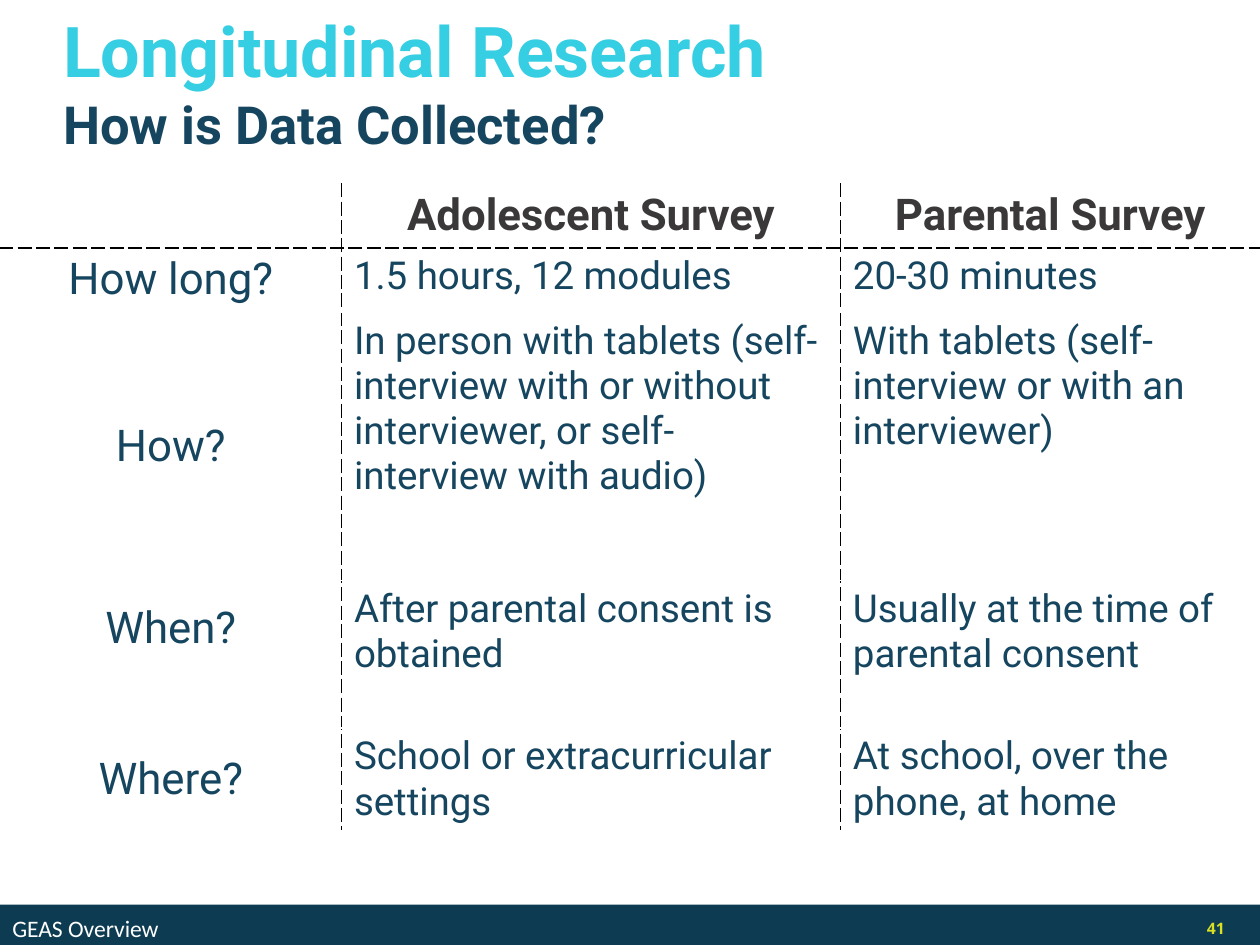
from lxml.etree import SubElement
from pptx import Presentation
from pptx.dml.color import RGBColor
from pptx.enum.shapes import MSO_SHAPE
from pptx.enum.text import MSO_ANCHOR, MSO_AUTO_SIZE, PP_ALIGN
from pptx.oxml.ns import qn
from pptx.util import Inches, Pt

COLORS = {
    "white": "FFFFFF",
    "black": "000000",
    "cyan": "35CEE2",
    "navy": "15455F",
    "charcoal": "3A3838",
    "footer": "0D3B52",
    "lime": "D9E021",
}
COLUMN_WIDTHS = [2.71, 3.96, 3.33]
ROW_HEIGHTS = [0.5, 0.51, 2.13, 1.17, 0.82]
SURVEY_ROWS = [
    ["", "Adolescent Survey", "Parental Survey"],
    ["How long?", "1.5 hours, 12 modules", "20-30 minutes"],
    ["How?",
     "In person with tablets (self-interview with or without interviewer, "
     "or self-interview with audio)",
     "With tablets (self-interview or with an interviewer)"],
    ["When?", "After parental consent is obtained",
     "Usually at the time of parental consent"],
    ["Where?", "School or extracurricular settings",
     "At school, over the phone, at home"],
]
WHEN_ROW = 3


def format_para(para, size, color, font="Roboto", bold=False, align=PP_ALIGN.LEFT):
    para.alignment = align
    for span in para.runs:
        span.font.name = font
        span.font.size = Pt(size)
        span.font.bold = bold
        span.font.color.rgb = RGBColor.from_string(COLORS[color])


def add_title(page, left, top, width, height):
    title = page.shapes.title
    title.left, title.top, title.width, title.height = map(
        Inches, (left, top, width, height))
    frame = title.text_frame
    frame.text = "Longitudinal Research\nHow is Data Collected?"
    frame.word_wrap = True
    frame.auto_size = MSO_AUTO_SIZE.NONE
    frame.vertical_anchor = MSO_ANCHOR.MIDDLE
    heading, question = frame.paragraphs
    format_para(heading, 40, "cyan", bold=True)
    format_para(question, 30, "navy", bold=True)


def set_borders(cell, dashed_edges):
    """Dash the named edges in black and draw the others in white."""
    properties = cell._tc.get_or_add_tcPr()
    for position, edge in enumerate("LRTB"):
        dashed = edge in dashed_edges
        line = SubElement(properties, qn(f"a:ln{edge}"), w=str(Pt(1)))
        fill = SubElement(line, qn("a:solidFill"))
        SubElement(fill, qn("a:srgbClr"),
                   val=COLORS["black" if dashed else "white"])
        SubElement(line, qn("a:prstDash"), val="dash" if dashed else "solid")
        properties.remove(line)
        properties.insert(position, line)  # borders come before the fill


def dashed_edges_at(row, column):
    edges = {0: "B", 1: "T"}.get(row, "")
    if column > 0:
        edges += "L"
    if column < len(COLUMN_WIDTHS) - 1:
        edges += "R"
    return edges


def add_survey_table(page, left, top, width, height):
    table = page.shapes.add_table(
        len(ROW_HEIGHTS), len(COLUMN_WIDTHS),
        *map(Inches, (left, top, width, height))).table
    table.horz_banding = False
    for column, size in zip(table.columns, COLUMN_WIDTHS):
        column.width = Inches(size)
    for row, size in zip(table.rows, ROW_HEIGHTS):
        row.height = Inches(size)

    for row, texts in enumerate(SURVEY_ROWS):
        for column, text in enumerate(texts):
            cell = table.cell(row, column)
            cell.fill.solid()
            cell.fill.fore_color.rgb = RGBColor.from_string(COLORS["white"])
            set_borders(cell, dashed_edges_at(row, column))
            cell.text_frame.text = text
            para = cell.text_frame.paragraphs[0]
            if row == 0:
                format_para(para, 25, "charcoal", bold=True, align=PP_ALIGN.CENTER)
            elif column == 0:
                cell.vertical_anchor = MSO_ANCHOR.MIDDLE
                format_para(para, 25, "navy", align=PP_ALIGN.CENTER)
            else:
                format_para(para, 22, "navy")
    # This label sits level with its two-line answers
    table.cell(WHEN_ROW, 0).margin_bottom = Inches(0.46)


def add_footer(page, left, top, width, height):
    bar = page.shapes.add_shape(
        MSO_SHAPE.RECTANGLE, *map(Inches, (left, top, width, height)))
    bar.shadow.inherit = False
    bar.fill.solid()
    bar.fill.fore_color.rgb = RGBColor.from_string(COLORS["footer"])
    bar.line.fill.background()
    number = page.shapes.add_textbox(
        Inches(left + width - 0.84), Inches(top + 0.04), Inches(0.66), Inches(0.3))
    for box, text in ((bar, "GEAS Overview"), (number, "41")):
        box.text_frame.text = text
        box.text_frame.word_wrap = True
        box.text_frame.vertical_anchor = MSO_ANCHOR.MIDDLE
    format_para(bar.text_frame.paragraphs[0], 13.5, "white", font="Calibri")
    format_para(number.text_frame.paragraphs[0], 9, "lime", font="Open Sans",
                bold=True, align=PP_ALIGN.RIGHT)


def main():
    deck = Presentation()
    deck.slide_width, deck.slide_height = Inches(10), Inches(7.5)
    page = deck.slides.add_slide(deck.slide_layouts[5])
    add_survey_table(page, 0, 1.46, sum(COLUMN_WIDTHS), sum(ROW_HEIGHTS))
    add_footer(page, 0, 7.18, 10, 0.37)
    add_title(page, 0.4, 0.02, 9.6, 1.25)
    deck.save("out.pptx")


if __name__ == "__main__":
    main()
